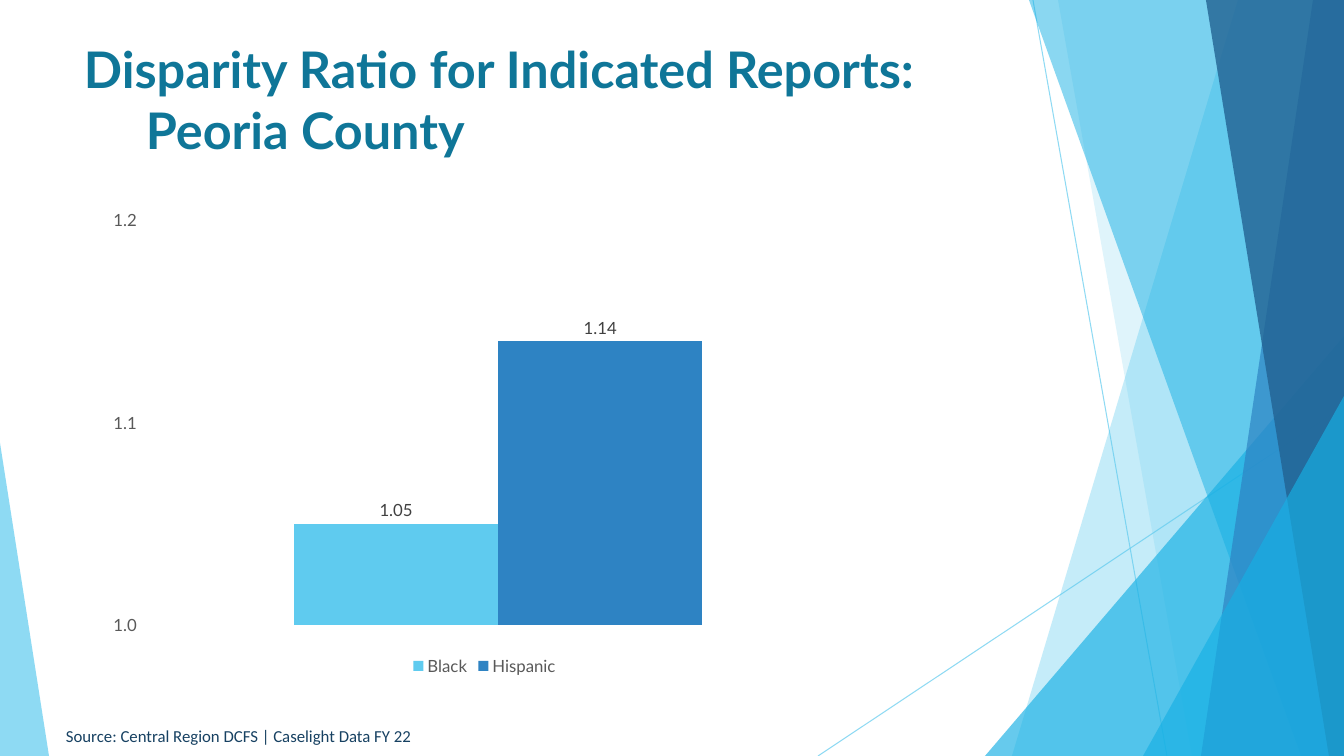
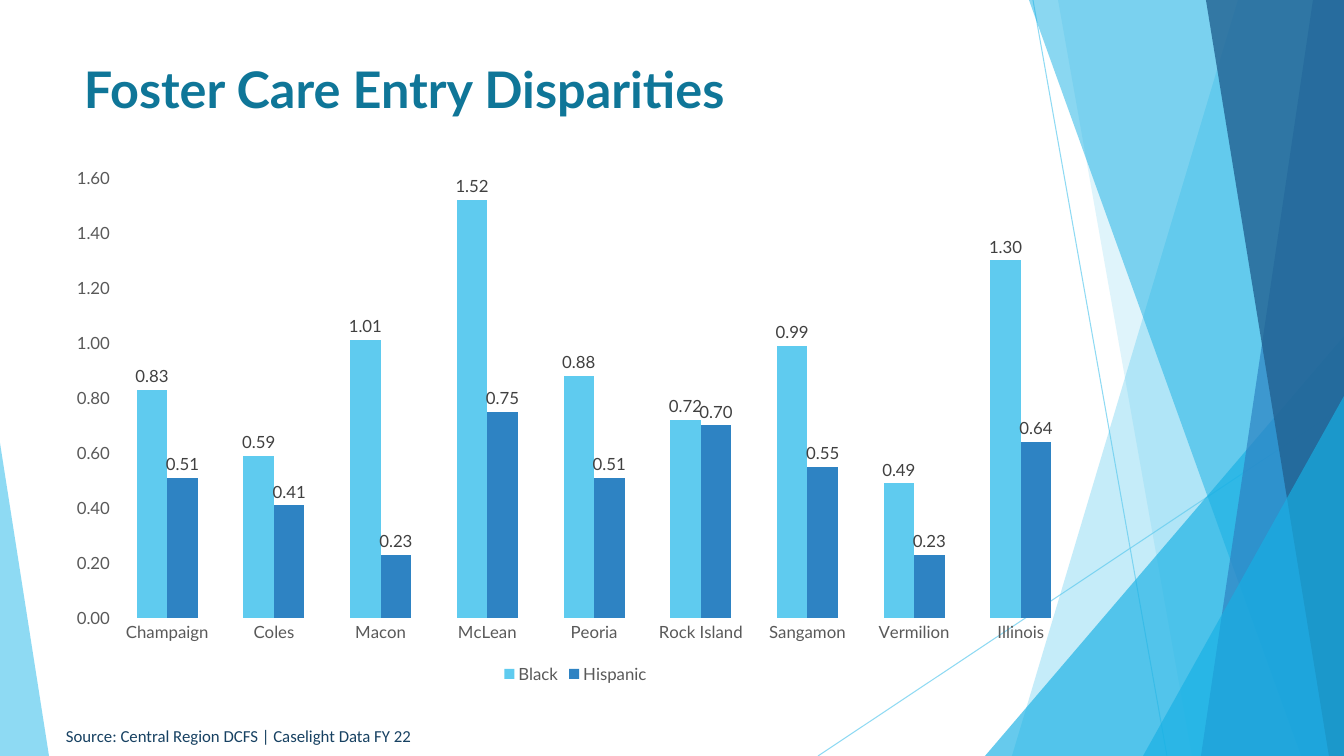
import pptx
import pptx.chart.data
import pptx.dml.color
import pptx.enum.chart
import pptx.enum.shapes
import pptx.enum.text
import pptx.oxml.ns
import pptx.util
from lxml import etree

PX = 9072  # EMU in one px
WIDE, HIGH = 1344, 756
SKY, BLUE, AQUA, NAVY = "5FCBEF", "2E83C3", "17B0E4", "226292"
TEAL, INK, GREY, DARK = "0F7698", "174162", "595959", "404040"
SOURCE = "Source: Central Region DCFS | Caselight Data FY 22"

LINES = [(1033, 0, 1167, HIGH), (WIDE, 406, 818, HIGH)]
# Bands run from the top edge to the foot: (top x, foot x).
# Triangles stand on the foot: (left, top, width, tip).
DECOR = [
    ((1238, 1012), SKY, 36),
    ((1058, 1192), SKY, 20),
    ((985, 336, 359, 1), AQUA, 66),
    ((1029, 1301), AQUA, 50),
    ((1313, 1201), BLUE, 70),
    ((1206, 1329), NAVY, 80),
    ((1143, 396, 201, 1), AQUA, 66),
    ((0, 443, 49, 0), SKY, 70),
]

SLIDES = [
    dict(
        title=["Disparity Ratio for Indicated Reports:", "Peoria County"],
        head=(74, 37, 948, 124), box=(98, 200, 773, 480),
        cats=["1"], black=[1.05], hispanic=[1.14],
        scale=(1, 1.2, 0.1), ticks="0.0", labels="#,##0.00", named=False,
    ),
    dict(
        title=["Foster Care Entry Disparities"],
        head=(74, 50, 948, 76), box=(56, 157, 1039, 531),
        cats=["Champaign", "Coles", "Macon", "McLean", "Peoria",
              "Rock Island", "Sangamon", "Vermilion", "Illinois"],
        black=[0.83, 0.59, 1.01, 1.52, 0.88, 0.72, 0.99, 0.49, 1.3],
        hispanic=[0.51, 0.41, 0.23, 0.75, 0.51, 0.7, 0.55, 0.23, 0.64],
        scale=(0, 1.6, 0.2), ticks="0.00", labels="0.00", named=True,
    ),
]


def paint(fill, color):
    fill.solid()
    fill.fore_color.rgb = pptx.dml.color.RGBColor.from_string(color)


def write(slide, lines, box, size, font, color, bold=False, anchor="TOP", indent=0):
    """Add a text box; lines after the first are indented by indent px."""
    frame = slide.shapes.add_textbox(*(n * PX for n in box)).text_frame
    frame.word_wrap = True
    frame.vertical_anchor = getattr(pptx.enum.text.MSO_ANCHOR, anchor)
    for i, line in enumerate(lines):
        para = frame.add_paragraph() if i else frame.paragraphs[0]
        if i and indent:
            para._p.get_or_add_pPr().set("marL", str(indent * PX))
        run = para.add_run()
        run.text = line
        run.font.size = pptx.util.Pt(size)
        run.font.name = font
        run.font.bold = bold
        paint(run.font.fill, color)


deck = pptx.Presentation()
deck.slide_width, deck.slide_height = WIDE * PX, HIGH * PX
qn = pptx.oxml.ns.qn
enum = pptx.enum.chart

for page in SLIDES:
    slide = deck.slides.add_slide(deck.slide_layouts[6])
    shapes = slide.shapes

    # Background facets
    facets = []
    for ends in LINES:
        line = shapes.add_connector(
            pptx.enum.shapes.MSO_CONNECTOR.STRAIGHT, *(n * PX for n in ends))
        line.line.width = pptx.util.Pt(0.75)
        paint(line.line.fill, SKY)
        etree.SubElement(line._element.spPr, qn("a:effectLst"))
        facets.append((line, 70))
    for form, color, alpha in DECOR:
        if len(form) == 2:
            top, foot = form
            pen = shapes.build_freeform(top, 0, scale=PX)
            pen.add_line_segments([(WIDE, 0), (WIDE, HIGH), (foot, HIGH)], close=True)
            facet = pen.convert_to_shape()
        else:
            left, top, width, tip = form
            facet = shapes.add_shape(
                pptx.enum.shapes.MSO_SHAPE.ISOSCELES_TRIANGLE,
                left * PX, top * PX, width * PX, (HIGH - top) * PX)
            facet.adjustments[0] = tip
        paint(facet.fill, color)
        facet.line.fill.background()
        facet.shadow.inherit = False
        facets.append((facet, alpha))
    for facet, alpha in facets:
        tone = facet._element.spPr.find(".//" + qn("a:srgbClr"))
        etree.SubElement(tone, qn("a:alpha")).set("val", str(alpha * 1000))

    write(slide, page["title"], page["head"], 36, "Lato", TEAL,
          bold=True, anchor="MIDDLE", indent=62)
    write(slide, [SOURCE], (56, 721, 400, 30), 12, "Calibri", INK)

    # Chart
    data = pptx.chart.data.CategoryChartData()
    data.categories = page["cats"]
    data.add_series("Black", page["black"])
    data.add_series("Hispanic", page["hispanic"])
    chart = shapes.add_chart(
        enum.XL_CHART_TYPE.COLUMN_CLUSTERED, *(n * PX for n in page["box"]), data).chart
    chart.has_title = False
    chart.has_legend = True
    chart.legend.position = enum.XL_LEGEND_POSITION.BOTTOM
    chart.legend.include_in_layout = False

    cat, val = chart.category_axis, chart.value_axis
    for axis in (cat, val):
        axis.has_major_gridlines = False
        axis.major_tick_mark = enum.XL_TICK_MARK.NONE
        axis.format.line.fill.background()
    cat.visible = page["named"]
    val.minimum_scale, val.maximum_scale, val.major_unit = page["scale"]
    val.tick_labels.number_format = page["ticks"]
    val.tick_labels.number_format_is_linked = False

    plot = chart.plots[0]
    plot.vary_by_categories = False
    plot.gap_width, plot.overlap = 150, 0
    fonts = [(chart.font, GREY), (chart.legend.font, GREY),
             (cat.tick_labels.font, GREY), (val.tick_labels.font, GREY)]
    for bars, color in zip(plot.series, (SKY, BLUE)):
        paint(bars.format.fill, color)
        bars.invert_if_negative = False
        labels = bars.data_labels
        labels.show_value = True
        labels.position = enum.XL_LABEL_POSITION.OUTSIDE_END
        labels.number_format = page["labels"]
        labels.number_format_is_linked = False
        fonts.append((labels.font, DARK))
    for font, color in fonts:
        font.size = pptx.util.Pt(12)
        font.name = "Lato"
        paint(font.fill, color)

deck.save("out.pptx")
